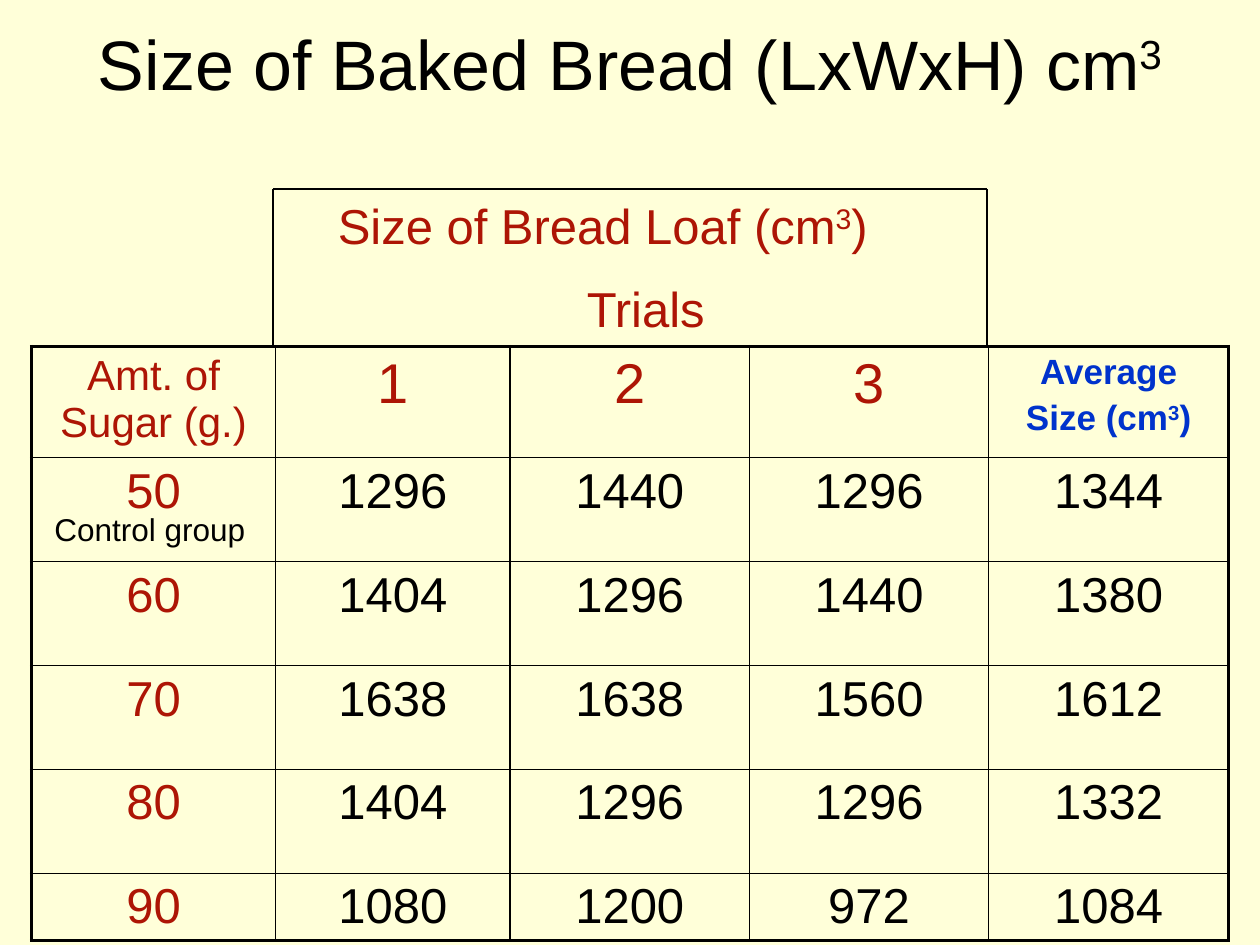
from lxml.etree import SubElement
from pptx import Presentation
from pptx.dml.color import RGBColor
from pptx.enum.shapes import MSO_CONNECTOR as Connector
from pptx.enum.text import MSO_ANCHOR as Anchor, PP_ALIGN as Align
from pptx.oxml.ns import qn
from pptx.util import Pt

CREAM = RGBColor(0xFF, 0xFF, 0xD9)
BLACK = RGBColor(0, 0, 0)
RED = RGBColor(0xAD, 0x15, 0x05)
BLUE = RGBColor(0, 0x33, 0xCC)


def write(para, text, size, color, align=Align.CENTER, bold=False):
    """Fill a paragraph; the part between carets is superscript."""
    para.alignment = align
    font = para.font
    font.name, font.size, font.bold = "Arial", Pt(size), bold
    font.color.rgb = color
    for index, part in enumerate(text.split("^")):
        span = para.add_run()
        span.text = part
        if index % 2:
            span._r.get_or_add_rPr().set("baseline", "30000")


def add_box(left, top, width, height):
    frame = slide.shapes.add_textbox(Pt(left), Pt(top), Pt(width), Pt(height)).text_frame
    frame.word_wrap = True
    return frame


deck = Presentation()
deck.slide_width, deck.slide_height = Pt(720), Pt(540)
slide = deck.slides.add_slide(deck.slide_layouts[6])
slide.background.fill.solid()
slide.background.fill.fore_color.rgb = CREAM

# Title
title = add_box(36, 0, 648, 72)
title.vertical_anchor = Anchor.MIDDLE
write(title.paragraphs[0], "Size of Baked Bread (LxWxH) cm^3^", 40, BLACK)

# Results table
rows = [
    ["Amt. of Sugar (g.)", "1", "2", "3", "Average\nSize (cm^3^)"],
    ["50", "1296", "1440", "1296", "1344"],
    ["60", "1404", "1296", "1440", "1380"],
    ["70", "1638", "1638", "1560", "1612"],
    ["80", "1404", "1296", "1296", "1332"],
    ["90", "1080", "1200", "972", "1084"],
]
widths = [139.5, 134, 136.75, 136.75, 137]
heights = [63.5, 59.4, 59.4, 59.4, 59.4, 38]
last_row, last_column = len(rows) - 1, len(widths) - 1
table = slide.shapes.add_table(
    len(rows), len(widths), Pt(18), Pt(198), Pt(sum(widths)), Pt(sum(heights))
).table
table.first_row = table.horz_banding = False
for column, width in zip(table.columns, widths):
    column.width = Pt(width)
for row, height in zip(table.rows, heights):
    row.height = Pt(height)

for r, texts in enumerate(rows):
    for c, text in enumerate(texts):
        cell = table.cell(r, c)
        # A small bottom margin lets the short last row keep its height
        cell.margin_bottom = Pt(1)
        size, color, bold = 28, RED if c == 0 else BLACK, False
        if r == 0:
            size, color = (24 if c == 0 else 32), RED
            if c == last_column:
                size, color, bold = 20, BLUE, True
        for index, line in enumerate(text.split("\n")):
            frame = cell.text_frame
            para = frame.add_paragraph() if index else frame.paragraphs[0]
            write(para, line, size, color, bold=bold)
            if index:
                para.space_before = Pt(4)

        # Borders: thick on the outside, thin inside
        properties = cell._tc.get_or_add_tcPr()
        outer = {"L": c == 0, "R": c == last_column, "T": r == 0, "B": r == last_row}
        for side, is_outer in outer.items():
            width = Pt(2.25 if is_outer else 1)
            border = SubElement(properties, qn(f"a:ln{side}"), w=str(width))
            fill = SubElement(border, qn("a:solidFill"))
            SubElement(fill, qn("a:srgbClr"), val=str(BLACK))
        cell.fill.background()

# Bracket above the trial columns
left, right, top, bottom = 156, 564, 108, 198
corners = [(left, bottom), (left, top), (right, top), (right, bottom)]
for start, end in zip(corners, corners[1:]):
    edge = slide.shapes.add_connector(Connector.STRAIGHT, *map(Pt, start + end))
    edge.line.color.rgb = BLACK
    edge.line.width = Pt(0.75)
    SubElement(edge._element.spPr, qn("a:effectLst"))

# Heading inside the bracket
heading = add_box(186, 108, 366, 91.5)
write(heading.paragraphs[0], "Size of Bread Loaf (cm^3^)", 28, RED, Align.LEFT)
trials = heading.add_paragraph()
write(trials, "Trials", 28, RED)
trials.space_before = Pt(14)

# Note on the first data row
note = add_box(24, 288, 132, 29)
write(note.paragraphs[0], "Control group", 18, BLACK, Align.LEFT)

deck.save("out.pptx")
